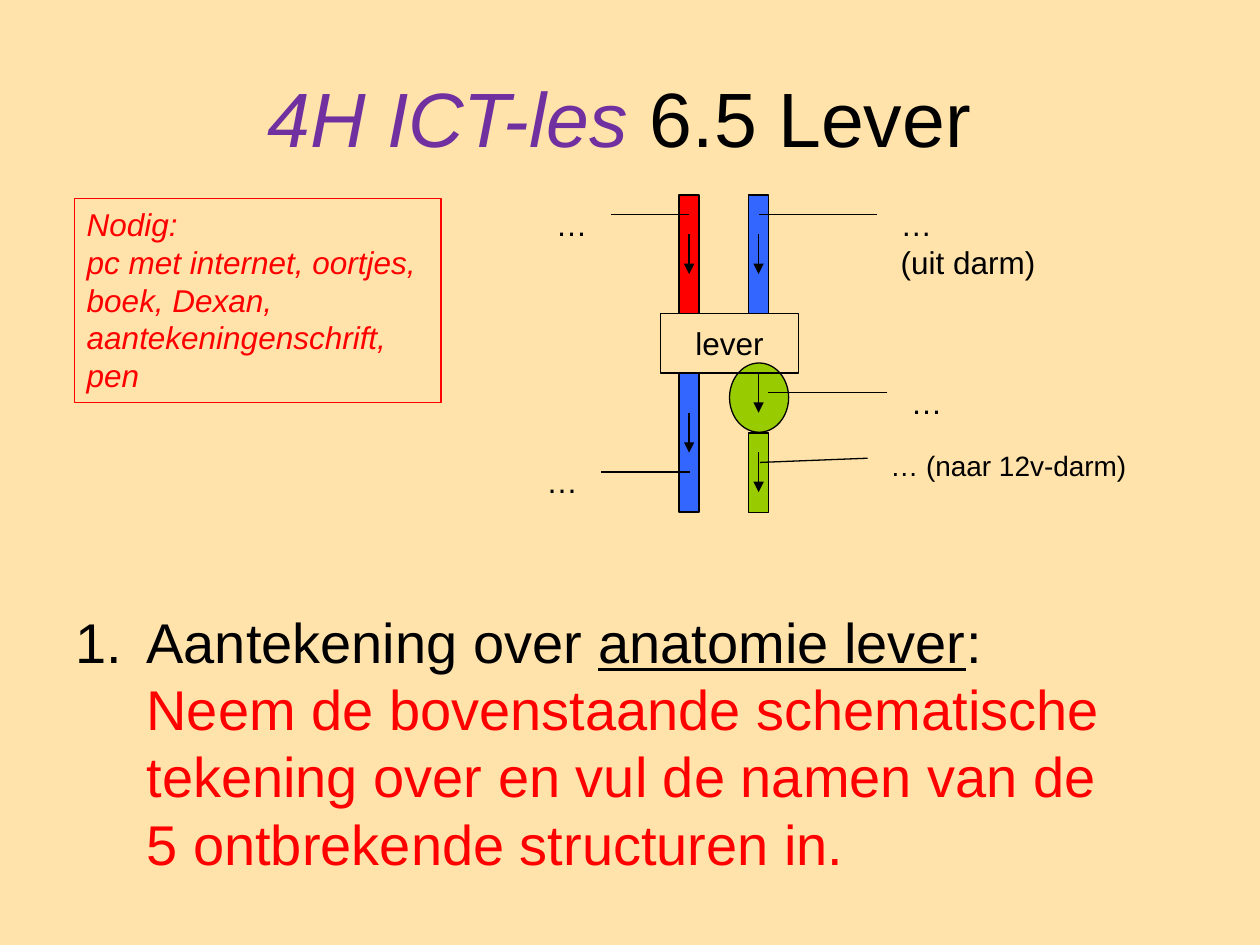
from dataclasses import dataclass
from lxml import etree
from pptx import Presentation
from pptx.dml.color import RGBColor
from pptx.enum.shapes import MSO_CONNECTOR as Conn, MSO_SHAPE as Shape
from pptx.enum.text import MSO_ANCHOR as Anchor, MSO_AUTO_SIZE as Fit, PP_ALIGN as Align
from pptx.oxml.ns import qn
from pptx.util import Pt


@dataclass(frozen=True)
class Theme:
    font: str = "Arial"
    background: str = "FFE3AB"
    black: str = "000000"
    red: str = "FF0000"
    purple: str = "7030A0"
    blue: str = "3366FF"
    green: str = "99CC00"
    title: int = 44
    body: int = 32
    label: int = 18
    small: int = 16
    line: float = 0.75


theme = Theme()


def style(r, size, color, italic=False, underline=False):
    r.font.name = theme.font
    r.font.size = Pt(size)
    r.font.color.rgb = RGBColor.from_string(color)
    r.font.italic = italic
    r.font.underline = underline


def add_box(kind, box, fill=None, line=theme.black, text="", size=theme.label,
            color=theme.black, align=Align.LEFT, anchor=Anchor.TOP, italic=False):
    sp = s.shapes.add_shape(kind, *map(Pt, box))
    sp.shadow.inherit = False
    sp.line.color.rgb = RGBColor.from_string(line)
    sp.line.width = Pt(theme.line)
    if fill:
        sp.fill.solid()
        sp.fill.fore_color.rgb = RGBColor.from_string(fill)
    else:
        sp.fill.background()
    if text:
        tf = sp.text_frame
        tf.text = text
        tf.word_wrap = True
        tf.vertical_anchor = anchor
        for p in tf.paragraphs:
            p.alignment = align
            for r in p.runs:
                style(r, size, color, italic)
    return sp


prs = Presentation()
prs.slide_width, prs.slide_height = Pt(720), Pt(540)
s = prs.slides.add_slide(prs.slide_layouts[1])
s.background.fill.solid()
s.background.fill.fore_color.rgb = RGBColor.from_string(theme.background)

title, body = s.shapes.title, s.placeholders[1]
for sp, box in ((title, (36, 21.6, 648, 90)), (body, (36, 343.5, 624.2, 139))):
    sp.left, sp.top, sp.width, sp.height = map(Pt, box)
    sp.text_frame.auto_size = Fit.NONE

title.text_frame.vertical_anchor = Anchor.MIDDLE
p = title.text_frame.paragraphs[0]
p.alignment = Align.CENTER
for text, color, italic in (("4H ICT-les ", theme.purple, True), ("6.5 Lever ", theme.black, False)):
    r = p.add_run()
    r.text = text
    style(r, theme.title, color, italic)

p = body.text_frame.paragraphs[0]
for text, color, underline in (
    ("Aantekening over ", theme.black, False),
    ("anatomie lever", theme.black, True),
    (":", theme.black, False),
    ("Neem de bovenstaande schematische tekening over en vul de namen "
     "van de 5 ontbrekende structuren in.", theme.red, False),
):
    if color == theme.red:
        p.add_line_break()
    r = p.add_run()
    r.text = text
    style(r, theme.body, color, underline=underline)
pPr = p._p.get_or_add_pPr()
pPr.set("marL", str(Pt(40.5)))
pPr.set("indent", str(Pt(-40.5)))
etree.SubElement(pPr, qn("a:buFont"), typeface=theme.font)
etree.SubElement(pPr, qn("a:buAutoNum"), type="arabicPeriod")

left_x, right_x, vessel_w = 393.8, 433.5, 11.4
add_box(Shape.OVAL, (416.9, 207.4, 33.8, 39.6), theme.green)
for x, top, height, fill in (
    (left_x, 111.5, 67.8, theme.red),
    (right_x, 247.5, 45.4, theme.green),
    (right_x, 111.5, 67.8, theme.blue),
    (left_x, 213.2, 79.4, theme.blue),
):
    add_box(Shape.RECTANGLE, (x - vessel_w / 2, top, vessel_w, height), fill)

for x, top in ((left_x, 133.9), (right_x, 258.5), (right_x, 213.2), (left_x, 236), (right_x, 133.9)):
    arrow = s.shapes.add_connector(Conn.STRAIGHT, Pt(x), Pt(top), Pt(x), Pt(top + 22.7))
    arrow.line.color.rgb = RGBColor.from_string(theme.black)
    arrow.line.width = Pt(theme.line)
    etree.SubElement(arrow.line._get_or_add_ln(), qn("a:tailEnd"), type="triangle")
    etree.SubElement(arrow._element.spPr, qn("a:effectLst"))

for box, leader, text, size, align in (
    ((507.6, 113.6, 107.2, 48.2), (0.19, -0.06, 0.19, -0.69), "…\v(uit darm)", theme.label, Align.LEFT),
    ((218.2, 113.6, 124.6, 31.7), (0.28, 1.05, 0.28, 1.41), "…", theme.label, Align.RIGHT),
    ((513.4, 215.3, 90.7, 26), (0.35, -0.07, 0.35, -0.82), "…", theme.label, Align.LEFT),
    ((501.8, 252.7, 198.7, 48.2), (0.19, -0.03, 0.24, -0.34), "… (naar 12v-darm)", theme.small, Align.LEFT),
    ((246.6, 260.6, 90.7, 26), (0.35, 1.07, 0.35, 1.63), "…", theme.label, Align.RIGHT),
):
    sp = add_box(Shape.LINE_CALLOUT_1_NO_BORDER, box, text=text, size=size, align=align)
    for i, value in enumerate(leader):
        sp.adjustments[i] = value

liver = add_box(Shape.RECTANGLE, (377.3, 179.3, 79.2, 33.9), text="lever",
                align=Align.CENTER, anchor=Anchor.MIDDLE)
liver.text_frame.word_wrap = False

needs = add_box(Shape.RECTANGLE, (42.5, 113.6, 209.6, 116.6), line=theme.red,
                text="Nodig:\npc met internet, oortjes, boek, Dexan, aantekeningenschrift, pen",
                color=theme.red, italic=True)
needs.text_frame.auto_size = Fit.SHAPE_TO_FIT_TEXT

prs.save("out.pptx")
